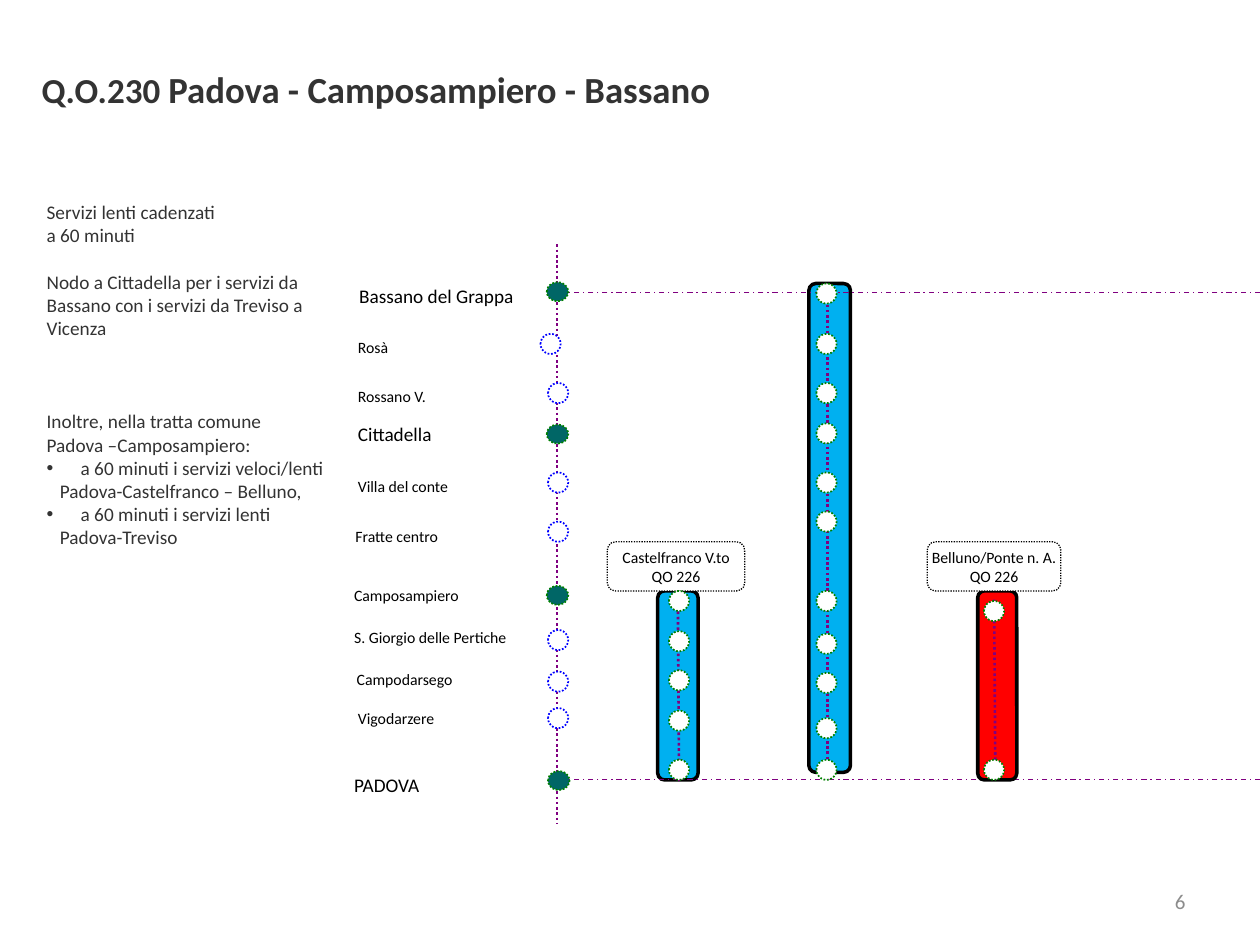
from lxml.etree import SubElement
from pptx import Presentation
from pptx.dml.color import RGBColor
from pptx.enum.dml import MSO_LINE
from pptx.enum.shapes import MSO_CONNECTOR, MSO_SHAPE
from pptx.enum.text import MSO_ANCHOR, PP_ALIGN
from pptx.oxml.ns import qn
from pptx.util import Inches, Pt

COLUMNS, ROWS = 100, 75
CELL = Inches(0.1)
COLORS = {
    "black": "000000", "text": "333333", "number": "8C8C8C", "white": "FFFFFF",
    "slow": "00B0F0", "fast": "FF0000", "route": "800080",
    "node": "006666", "served": "008000", "halt": "0000FF",
}
DOT = 1.6
NODE = (1.7, 1.5)

STATIONS = [
    ("Bassano del Grappa", 11, (27.6, 21.5, 14.6, 3.2), (43.4, 22.4), True),
    ("Rosà", 9, (27.5, 25.9, 4.3, 2.9), (42.9, 26.5), False),
    ("Rossano V.", 9, (27.5, 29.8, 7.6, 2.9), (43.5, 30.4), False),
    ("Cittadella", 11, (27.5, 32.5, 8, 3.4), (43.4, 33.7), True),
    ("Villa del conte", 9, (27.5, 36.9, 9, 2.9), (43.5, 37.5), False),
    ("Fratte centro", 9, (27.3, 40.9, 8.8, 2.9), (43.5, 41.4), False),
    ("Camposampiero", 9, (27.2, 45.6, 13, 2.9), (43.4, 46.5), True),
    ("S. Giorgio delle Pertiche", 9, (27.2, 48.9, 14.5, 2.9), (43.5, 50), False),
    ("Campodarsego", 9, (27.4, 52.2, 9.8, 2.9), (43.5, 53.3), False),
    ("Vigodarzere", 9, (27.5, 55.3, 15.8, 2.9), (43.5, 56.2), False),
    ("PADOVA", 11, (27.2, 60.3, 7.2, 3.2), (43.5, 61.2), True),
]

SLOW_SERVICES = [
    ((52.2, 46.9, 3.2, 15), ((53.8, 47.7), (53.9, 62)), 53.1,
     [46.9, 50.1, 53.2, 56.4, 60.3]),
    ((64.2, 22.5, 3.3, 38.8), ((65.7, 22.5), (65.7, 61.9)), 64.8,
     [22.5, 26.5, 30.4, 33.6, 37.5, 40.6, 46.9, 50.3, 53.4, 57, 60.3]),
]
FAST_SERVICE = ((77.6, 46.9, 3.1, 15), ((78.9, 47.6), (79, 61.9)), 78.1, [47.7, 60.3])

DESTINATIONS = [
    ("Castelfranco V.to", (48.2, 43, 10.9, 3.9)),
    ("Belluno/Ponte n. A.", (73.6, 43, 10.6, 3.9)),
]

NOTES = [
    ("Servizi lenti cadenzati", {}),
    ("a 60 minuti", {}),
    ("Nodo a Cittadella per i servizi da Bassano con i servizi da Treviso a Vicenza",
     {"before": 13.4}),
    ("Inoltre, nella tratta comune", {"before": 40.2}),
    ("Padova –Camposampiero:", {}),
    ("a 60 minuti i servizi veloci/lenti", {"indent": 2.7, "bullet": True}),
    ("Padova-Castelfranco – Belluno,", {"indent": 1.05}),
    ("a 60 minuti i servizi lenti", {"indent": 2.7, "bullet": True}),
    ("Padova-Treviso", {"indent": 1.05}),
]


def cells(*counts):
    return [round(count * CELL) for count in counts]


def rgb(name):
    return RGBColor.from_string(COLORS[name])


def set_line(line, color, width, dash=None):
    line.color.rgb = rgb(color)
    line.width = Pt(width)
    if dash is not None:
        line.dash_style = dash


def write(frame, text, size=11, color="black", bold=False, align=PP_ALIGN.LEFT,
          spacing=None, before=0, indent=0, bullet=False, first=True):
    para = frame.paragraphs[0] if first else frame.add_paragraph()
    para.alignment = align
    para.space_before = Pt(before)
    if spacing:
        para.line_spacing = spacing
    if indent:
        margin = round(indent * CELL)
        properties = para._p.get_or_add_pPr()
        properties.set("marL", str(margin))
        properties.set("indent", str(-margin if bullet else 0))
        if bullet:
            SubElement(properties, qn("a:buFont")).set("typeface", "Arial")
            SubElement(properties, qn("a:buChar")).set("char", "•")
    span = para.add_run()
    span.text = text
    span.font.name = "Calibri"
    span.font.size = Pt(size)
    span.font.bold = bold
    span.font.color.rgb = rgb(color)
    return para


def set_frame(frame, wrap=True, anchor=MSO_ANCHOR.TOP):
    frame.word_wrap = wrap
    frame.vertical_anchor = anchor
    frame.margin_left = frame.margin_right = Inches(0.09)
    frame.margin_top = frame.margin_bottom = Inches(0.04)
    return frame


def add_text(page, place, wrap=True, anchor=MSO_ANCHOR.TOP):
    return set_frame(page.shapes.add_textbox(*cells(*place)).text_frame, wrap, anchor)


def add_figure(page, kind, place, fill, line, width, dash=None):
    figure = page.shapes.add_shape(kind, *cells(*place))
    figure.shadow.inherit = False
    figure.fill.solid()
    figure.fill.fore_color.rgb = rgb(fill)
    set_line(figure.line, line, width, dash)
    return figure


def add_dot(page, left, top, line, fill="white", size=(DOT, DOT)):
    add_figure(page, MSO_SHAPE.OVAL, (left, top, *size), fill, line, 1, MSO_LINE.ROUND_DOT)


def add_route(page, start, end, width=1.5, dash=MSO_LINE.ROUND_DOT):
    route = page.shapes.add_connector(MSO_CONNECTOR.STRAIGHT, *cells(*start, *end))
    set_line(route.line, "route", width, dash)
    SubElement(route._element.spPr, qn("a:effectLst"))


def add_bar(page, place, fill):
    add_figure(page, MSO_SHAPE.ROUNDED_RECTANGLE, place, fill, "black", 2)


def add_stops(page, route, left, tops):
    add_route(page, *route)
    for top in tops:
        add_dot(page, left, top, "served")


def add_station(page, name, size, label, dot, is_node):
    write(add_text(page, label, wrap=False), name, size=size, spacing=1.35)
    if is_node:
        add_dot(page, *dot, "served", "node", NODE)
    else:
        add_dot(page, *dot, "halt")


def add_destination(page, name, place):
    box = add_figure(page, MSO_SHAPE.ROUNDED_RECTANGLE, place, "white", "black", 0.75,
                     MSO_LINE.ROUND_DOT)
    frame = set_frame(box.text_frame, wrap=False, anchor=MSO_ANCHOR.MIDDLE)
    for index, text in enumerate((name, "QO 226")):
        write(frame, text, size=9, align=PP_ALIGN.CENTER, first=index == 0)


def add_title(page):
    frame = add_text(page, (2.4, 4.9, 91.3, 4.4))
    para = write(frame, "Q.O.230 ", size=20, color="text", bold=True)
    span = para.add_run()
    span.text = "Padova - Camposampiero - Bassano"
    span.font.name = "Calibri"
    span.font.size = Pt(21)
    span.font.bold = True
    span.font.color.rgb = rgb("text")


def add_notes(page):
    frame = add_text(page, (2.8, 15.5, 24.2, 32.4))
    for index, (text, options) in enumerate(NOTES):
        write(frame, text, color="text", first=index == 0, **options)


def main():
    deck = Presentation()
    deck.slide_width, deck.slide_height = cells(COLUMNS, ROWS)
    page = deck.slides.add_slide(deck.slide_layouts[6])

    add_title(page)
    add_notes(page)
    for bar, *_ in SLOW_SERVICES:
        add_bar(page, bar, "slow")
    add_route(page, (44.2, 19.4), (44.2, 65.4))
    for level in (23.2, 61.85):
        add_route(page, (COLUMNS, level), (43.8, level), 0.75, MSO_LINE.DASH_DOT)
    add_bar(page, FAST_SERVICE[0], "fast")
    for station in STATIONS:
        add_station(page, *station)
    for destination in DESTINATIONS:
        add_destination(page, *destination)
    for _, route, left, tops in [*SLOW_SERVICES, FAST_SERVICE]:
        add_stops(page, route, left, tops)
    number = add_text(page, (71.7, 69.5, 23.3, 4), anchor=MSO_ANCHOR.MIDDLE)
    write(number, "6", size=12, color="number", align=PP_ALIGN.RIGHT)

    deck.save("out.pptx")


if __name__ == "__main__":
    main()
